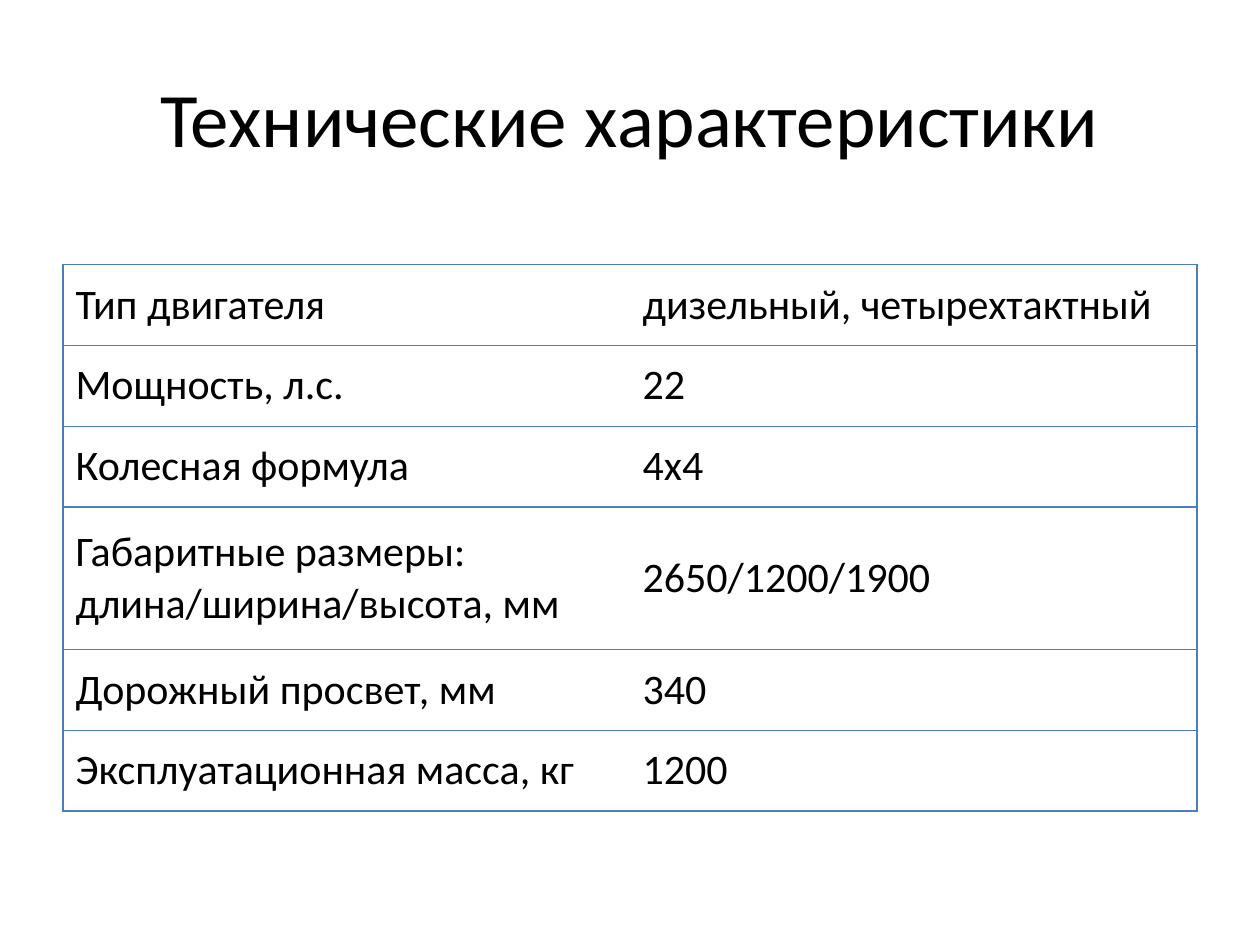
"""Build a slide with a table of technical specifications."""
import pptx
import pptx.dml.color
import pptx.enum.text
import pptx.util
from lxml import etree
from pptx.oxml.ns import qn

Cm = pptx.util.Cm
COLORS = {"text": "000000", "rule": "4B7EBC", "paper": "FFFFFF"}
SPECS = [
    ("Тип двигателя", "дизельный, четырехтактный"),
    ("Мощность, л.с.", "22"),
    ("Колесная формула", "4х4"),
    ("Габаритные размеры: длина/ширина/высота, мм", "2650/1200/1900"),
    ("Дорожный просвет, мм", "340"),
    ("Эксплуатационная масса, кг", "1200"),
]
ROW_HEIGHTS = [1.63, 1.63, 1.63, 2.87, 1.63, 1.63]


def style_text(paragraph, size):
    font = paragraph.runs[0].font
    font.name = "Calibri"
    font.size = pptx.util.Pt(size)
    font.bold = False
    font.color.rgb = pptx.dml.color.RGBColor.from_string(COLORS["text"])


def add_borders(cell, open_side):
    properties = cell._tc.get_or_add_tcPr()
    for side in ("lnL", "lnR", "lnT", "lnB"):
        line = etree.SubElement(properties, qn(f"a:{side}"), w=str(pptx.util.Pt(0.75)))
        if side == open_side:
            etree.SubElement(line, qn("a:noFill"))
        else:
            fill = etree.SubElement(line, qn("a:solidFill"))
            etree.SubElement(fill, qn("a:srgbClr"), val=COLORS["rule"])


deck = pptx.Presentation()
deck.slide_width = Cm(25.4)
deck.slide_height = Cm(19.05)
slide = deck.slides.add_slide(deck.slide_layouts[6])

specs = slide.shapes.add_table(
    len(SPECS), 2, Cm(1.27), Cm(5.33), Cm(22.86), Cm(sum(ROW_HEIGHTS))
).table
specs.first_row = False
specs.horz_banding = False
for row, height, entry in zip(specs.rows, ROW_HEIGHTS, SPECS):
    row.height = Cm(height)
    for cell, wording, open_side in zip(row.cells, entry, ("lnR", "lnL")):
        cell.text_frame.text = wording
        cell.vertical_anchor = pptx.enum.text.MSO_ANCHOR.MIDDLE
        style_text(cell.text_frame.paragraphs[0], 24)
        add_borders(cell, open_side)
        cell.fill.solid()
        cell.fill.fore_color.rgb = pptx.dml.color.RGBColor.from_string(COLORS["paper"])

heading = slide.shapes.add_textbox(Cm(1.27), Cm(0.76), Cm(22.86), Cm(3.18)).text_frame
heading.word_wrap = True
heading.vertical_anchor = pptx.enum.text.MSO_ANCHOR.MIDDLE
heading.text = "Технические характеристики"
heading.paragraphs[0].alignment = pptx.enum.text.PP_ALIGN.CENTER
style_text(heading.paragraphs[0], 44)

deck.save("out.pptx")
